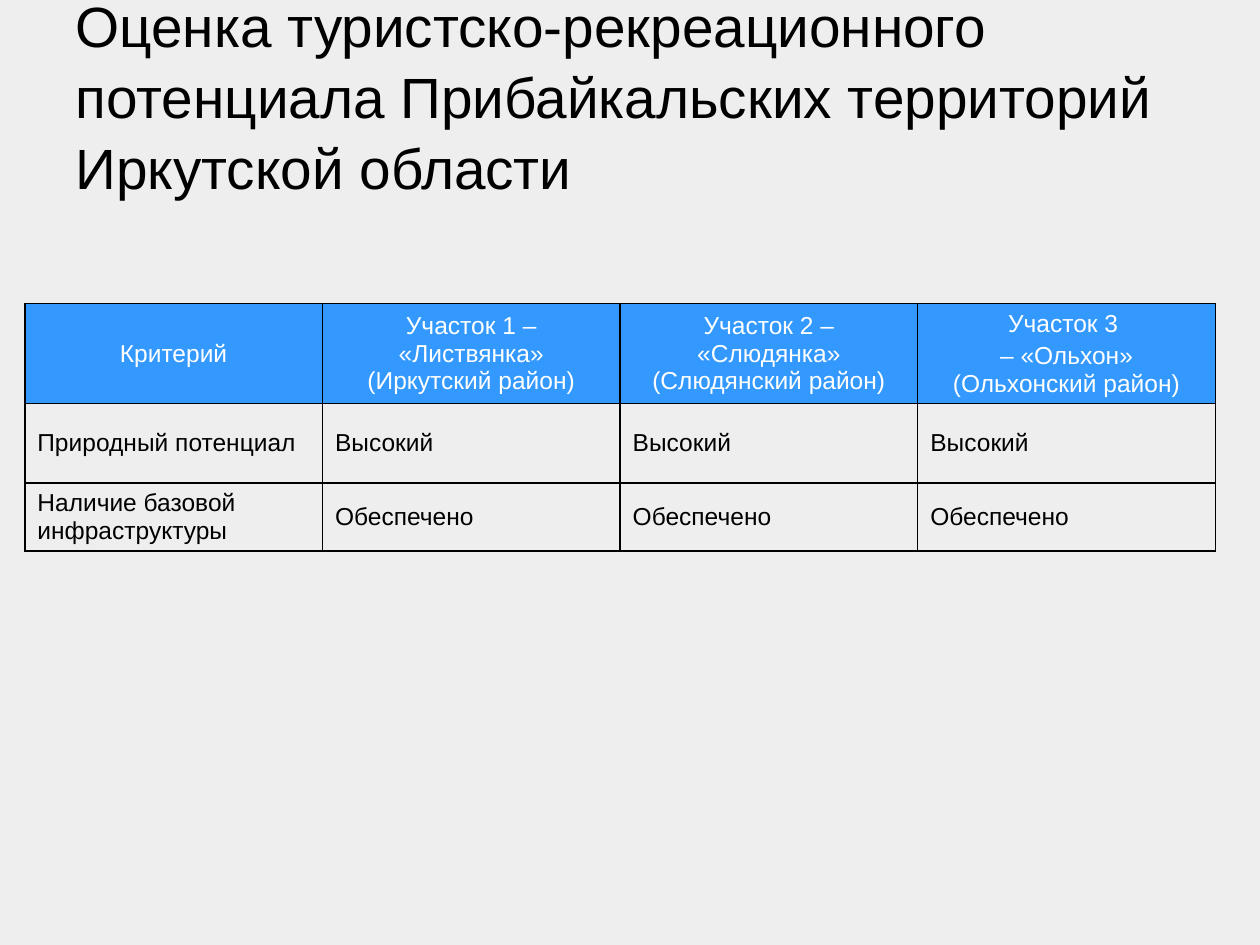
from lxml import etree
from pptx import Presentation
from pptx.dml.color import RGBColor
from pptx.enum.text import MSO_ANCHOR, MSO_AUTO_SIZE, PP_ALIGN
from pptx.oxml.ns import qn
from pptx.util import Cm, Pt

LEFT, CENTER = PP_ALIGN.LEFT, PP_ALIGN.CENTER
MIDDLE, BOTTOM = MSO_ANCHOR.MIDDLE, MSO_ANCHOR.BOTTOM
NO_AUTOFIT = MSO_AUTO_SIZE.NONE

TITLE = "Оценка туристско-рекреационного потенциала Прибайкальских территорий Иркутской области"
HEADER = [
    ["Критерий"],
    ["Участок 1 – «Листвянка» (Иркутский район)"],
    ["Участок 2 – «Слюдянка» (Слюдянский район)"],
    ["Участок 3 ", "– «Ольхон» (Ольхонский район)"],
]
RATINGS = [("Природный потенциал", "Высокий"), ("Наличие базовой инфраструктуры", "Обеспечено")]
ROW_HEIGHTS = [2.01, 1.6, 1.35]
COLUMN_WIDTH = 6
BLACK, WHITE, BLUE, GREY = "000000", "FFFFFF", "3399FF", "EEEEEE"


def color(value):
    """Turn a hex string into a colour."""
    return RGBColor.from_string(value)


def set_values(target, values):
    """Set attributes of an object from a dict."""
    for name, value in values.items():
        setattr(target, name, value)


def write(frame, lines, size, ink, layout):
    """Fill a text frame with formatted paragraphs."""
    for index, line in enumerate(lines):
        para = frame.add_paragraph() if index else frame.paragraphs[0]
        set_values(para, {**layout, "space_before": Pt(2.8 if index else 0)})
        span = para.add_run()
        span.text = line
        set_values(span.font, {"name": "Arial", "size": Pt(size), "bold": False})
        span.font.color.rgb = color(ink)


def add_borders(cell):
    """Draw a thin black line on each side of a cell."""
    properties = cell._tc.get_or_add_tcPr()
    for position, side in enumerate(("a:lnL", "a:lnR", "a:lnT", "a:lnB")):
        line = etree.Element(qn(side), w=str(Pt(1)))
        fill = etree.SubElement(line, qn("a:solidFill"))
        etree.SubElement(fill, qn("a:srgbClr"), val=BLACK)
        properties.insert(position, line)


def add_title(page):
    """Place and format the title."""
    title = page.shapes.title
    set_values(title, {"left": Cm(1.27), "top": Cm(0.99), "width": Cm(22.86), "height": Cm(3.18)})
    frame = title.text_frame
    set_values(frame, {"word_wrap": True, "auto_size": NO_AUTOFIT, "vertical_anchor": BOTTOM})
    write(frame, [TITLE], 32.4, BLACK, {"alignment": LEFT, "line_spacing": 1.04})


def add_ratings(page):
    """Build the table of criteria and sites."""
    rows = [HEADER] + [
        [[criterion]] + [[rating]] * (len(HEADER) - 1) for criterion, rating in RATINGS
    ]
    table = page.shapes.add_table(
        len(rows), len(HEADER), Cm(0.5), Cm(6.12),
        Cm(COLUMN_WIDTH * len(HEADER)), Cm(sum(ROW_HEIGHTS)),
    ).table
    set_values(table, {"first_row": False, "horz_banding": False})
    for column in table.columns:
        column.width = Cm(COLUMN_WIDTH)
    for row_index, (row, height) in enumerate(zip(rows, ROW_HEIGHTS)):
        table.rows[row_index].height = Cm(height)
        is_header = row_index == 0
        for column_index, lines in enumerate(row):
            cell = table.cell(row_index, column_index)
            cell.vertical_anchor = MIDDLE
            if is_header:
                cell.fill.solid()
                cell.fill.fore_color.rgb = color(BLUE)
            else:
                cell.fill.background()
            add_borders(cell)
            write(cell.text_frame, lines, 14, WHITE if is_header else BLACK,
                  {"alignment": CENTER if is_header else LEFT})


def main():
    """Build and save the slide."""
    deck = Presentation()
    set_values(deck, {"slide_width": Cm(25.4), "slide_height": Cm(19.05)})
    page = deck.slides.add_slide(deck.slide_layouts.get_by_name("Title Only"))
    page.background.fill.solid()
    page.background.fill.fore_color.rgb = color(GREY)
    add_title(page)
    add_ratings(page)
    deck.save("out.pptx")


if __name__ == "__main__":
    main()
